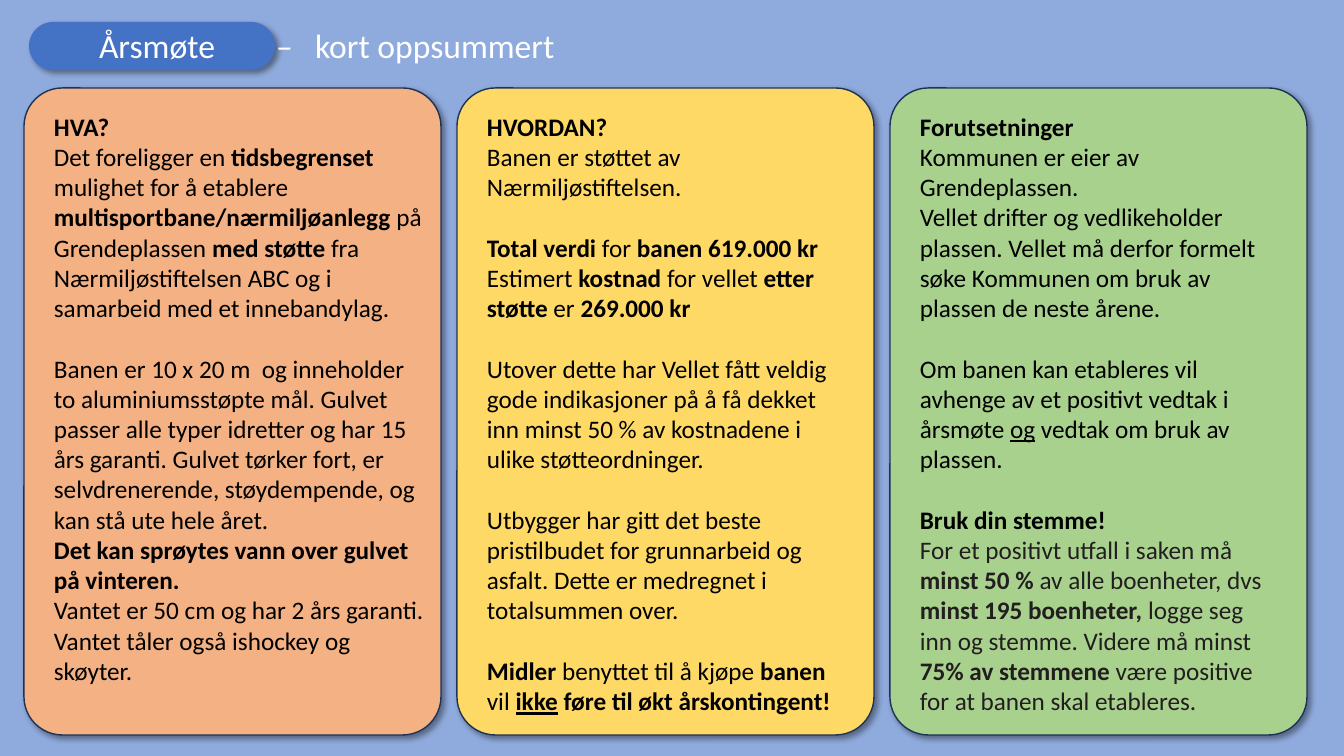
from lxml import etree
from pptx import Presentation
from pptx import util as u
from pptx.dml.color import RGBColor
from pptx.enum import shapes, text
from pptx.oxml import ns

PX_PER_INCH = 100.8
FONT = "Calibri"
BLOCK_GAP = u.Pt(21.6)

SKY = RGBColor(0x8F, 0xAA, 0xDC)
BLUE = RGBColor(0x44, 0x72, 0xC4)
NAVY = RGBColor(0x1E, 0x32, 0x56)
ORANGE = RGBColor(0xF4, 0xB1, 0x83)
YELLOW = RGBColor(0xFF, 0xD9, 0x66)
GREEN = RGBColor(0xA9, 0xD1, 0x8E)
WHITE = RGBColor(0xFF, 0xFF, 0xFF)
BLACK = RGBColor(0x00, 0x00, 0x00)
CHARCOAL = RGBColor(0x22, 0x1E, 0x1F)

WHAT = [
    ["*HVA?*",
     "Det foreligger en *tidsbegrenset *mulighet for å etablere "
     "*multisportbane/nærmiljøanlegg *på Grendeplassen *med støtte *fra "
     "Nærmiljøstiftelsen ABC og i samarbeid med et innebandylag."],
    ["Banen er 10 x 20 m  og inneholder to aluminiumsstøpte mål. Gulvet passer "
     "alle typer idretter og har 15 års garanti. Gulvet tørker fort, er "
     "selvdrenerende, støydempende, og kan stå ute hele året.",
     "*Det kan sprøytes vann over gulvet på vinteren.*",
     "Vantet er 50 cm og har 2 års garanti. Vantet tåler også ishockey og skøyter."],
]
HOW = [
    ["*HVORDAN?*", "Banen er støttet av Nærmiljøstiftelsen."],
    ["*Total verdi *for *banen 619.000 kr*",
     "Estimert* kostnad *for vellet *etter støtte *er *269.000 kr*"],
    ["Utover dette har Vellet fått veldig gode indikasjoner på å få dekket inn "
     "minst 50 % av kostnadene i ulike støtteordninger."],
    ["Utbygger har gitt det beste pristilbudet for grunnarbeid og asfalt. "
     "Dette er medregnet i totalsummen over."],
    ["*Midler *benyttet til å kjøpe *banen *vil *_ikke_ føre til økt årskontingent!*"],
]
CONDITIONS = [
    ["*Forutsetninger*",
     "Kommunen er eier av Grendeplassen.",
     "Vellet drifter og vedlikeholder plassen. Vellet må derfor formelt søke "
     "Kommunen om bruk av plassen de neste årene."],
    ["Om banen kan etableres vil avhenge av et positivt vedtak i årsmøte _og_ "
     "vedtak om bruk av plassen."],
    ["*Bruk din stemme!*",
     "For et positivt utfall i saken må *minst 50 % *av alle boenheter, dvs "
     "*minst 195 boenheter, *logge seg inn og stemme. Videre må minst "
     "*75% av stemmene *være positive for at banen skal etableres."],
]
COLUMNS = [
    (ORANGE, WHAT, 397, BLACK),
    (YELLOW, HOW, 377, BLACK),
    (GREEN, CONDITIONS, 377, CHARCOAL),
]


def px(length):
    return u.Emu(round(length * u.Inches(1) / PX_PER_INCH))


def place(shape, left, top, width, height):
    shape.left, shape.top = px(left), px(top)
    shape.width, shape.height = px(width), px(height)


def style_run(run, size, color, bold=False, underline=False):
    run.font.name = FONT
    run.font.size = u.Pt(size)
    run.font.color.rgb = color
    run.font.bold = bold
    run.font.underline = underline


def add_rounded(slide, left, top, width, height, radius, color):
    shape = slide.shapes.add_shape(
        shapes.MSO_SHAPE.ROUNDED_RECTANGLE, px(left), px(top), px(width), px(height))
    shape.adjustments[0] = radius
    shape.fill.solid()
    shape.fill.fore_color.rgb = color
    shape.line.fill.background()
    shape.shadow.inherit = False
    effects = shape._element.spPr.find(ns.qn("a:effectLst"))
    shadow = etree.SubElement(
        effects, ns.qn("a:outerShdw"), blurRad=str(u.Pt(4)), dist=str(u.Pt(3)),
        dir="2700000", algn="tl", rotWithShape="0")
    black = etree.SubElement(shadow, ns.qn("a:srgbClr"), val=str(BLACK))
    etree.SubElement(black, ns.qn("a:alpha"), val="40000")
    return shape


def add_heading(slide, left, top, width, height):
    add_rounded(slide, left, top + 2, 246, height - 2, 0.5, BLUE)
    title = slide.shapes.title
    slide.shapes._spTree.append(title._element)
    place(title, left + 70, top, width - 70, height)
    frame = title.text_frame
    frame.text = "Årsmøte\t–\tkort oppsummert"
    frame.word_wrap = True
    frame.auto_size = text.MSO_AUTO_SIZE.NONE
    frame.vertical_anchor = text.MSO_ANCHOR.MIDDLE
    frame.margin_left = frame.margin_right = 0
    frame.margin_top = frame.margin_bottom = 0
    paragraph = frame.paragraphs[0]
    paragraph.alignment = text.PP_ALIGN.LEFT
    tabs = etree.SubElement(paragraph._p.get_or_add_pPr(), ns.qn("a:tabLst"))
    for stop in (177, 216):
        etree.SubElement(tabs, ns.qn("a:tab"), pos=str(px(stop)), algn="l")
    for run in paragraph.runs:
        style_run(run, 24, WHITE)


def fill_paragraph(paragraph, markup, color):
    for bold_index, segment in enumerate(markup.split("*")):
        for line_index, words in enumerate(segment.split("_")):
            if words:
                run = paragraph.add_run()
                run.text = words
                style_run(run, 18, color, bold_index % 2 == 1, line_index % 2 == 1)


def add_column(slide, left, top, width, height, color, blocks, text_width, last_color):
    panel = add_rounded(slide, left, top, width, height, 0.092, color)
    panel.line.color.rgb = NAVY
    panel.line.width = u.Pt(1)
    box = slide.shapes.add_textbox(
        px(left + 20), px(top + 18), px(text_width), px(height - 26))
    frame = box.text_frame
    frame.word_wrap = True
    paragraph = frame.paragraphs[0]
    for block_index, block in enumerate(blocks):
        for index, markup in enumerate(block):
            if block_index or index:
                paragraph = frame.add_paragraph()
            if block_index and not index:
                paragraph.space_before = BLOCK_GAP
            closing = block is blocks[-1] and index == len(block) - 1
            fill_paragraph(paragraph, markup, last_color if closing else BLACK)


def main():
    presentation = Presentation()
    presentation.slide_width, presentation.slide_height = px(1344), px(756)
    slide = presentation.slides.add_slide(presentation.slide_layouts[5])
    slide.background.fill.solid()
    slide.background.fill.fore_color.rgb = SKY
    add_heading(slide, 29, 20, 596, 50)
    width, gap = 417, 16
    for index, column in enumerate(COLUMNS):
        add_column(slide, 24 + index * (width + gap), 88, width, 647, *column)
    presentation.save("out.pptx")


if __name__ == "__main__":
    main()
